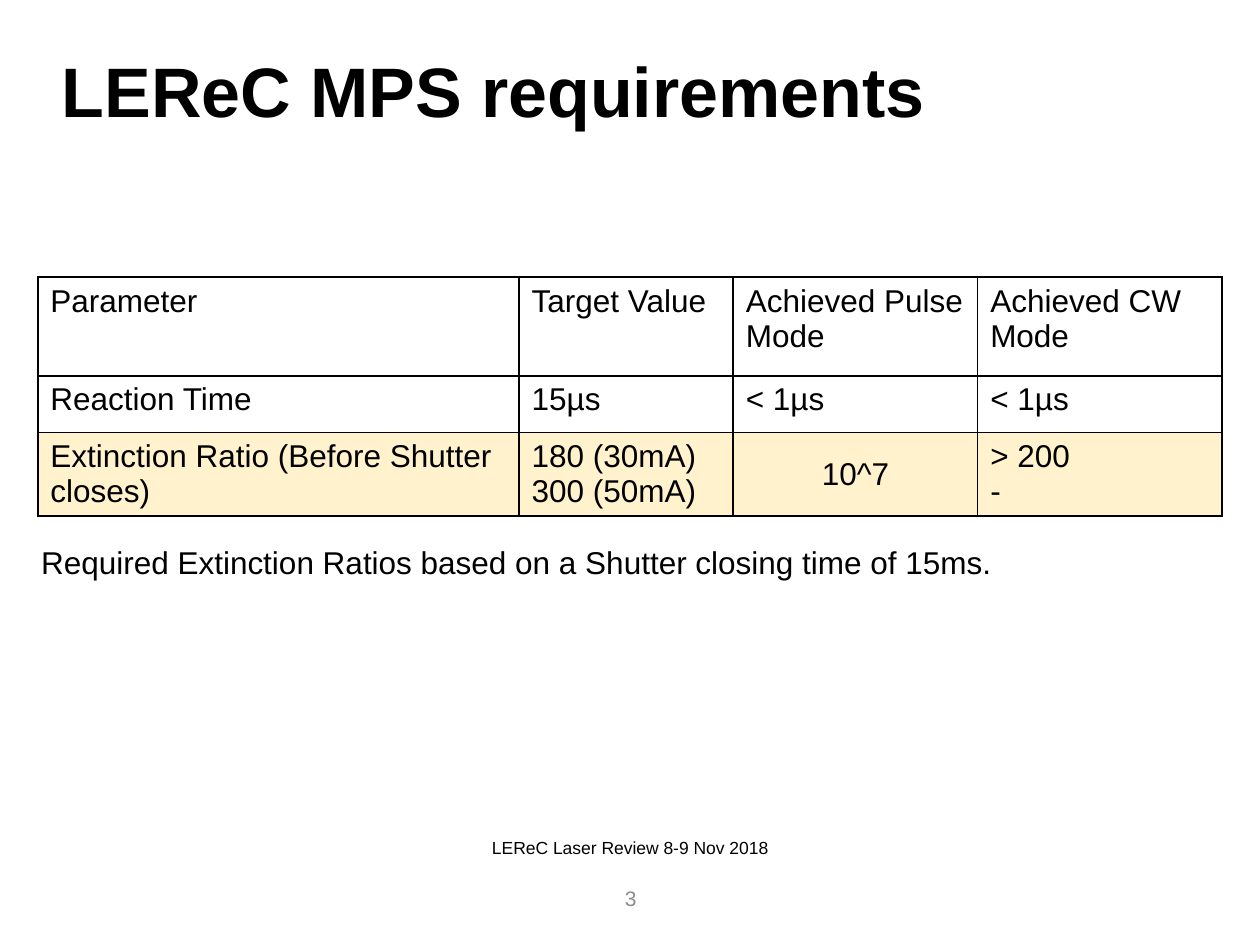
from dataclasses import dataclass

from lxml import etree
from pptx import Presentation
from pptx.dml.color import RGBColor
from pptx.enum.text import MSO_ANCHOR, MSO_AUTO_SIZE, PP_ALIGN
from pptx.oxml.ns import qn
from pptx.util import Pt

LEFT, CENTER = PP_ALIGN.LEFT, PP_ALIGN.CENTER
TOP, MIDDLE = MSO_ANCHOR.TOP, MSO_ANCHOR.MIDDLE
FIXED = MSO_AUTO_SIZE.NONE

FONT = "Arial"
COLORS = {"ink": "000000", "gray": "8C8C8C", "plain": "FFFFFF", "sand": "FFF2CC"}


@dataclass
class Box:
    x: float
    y: float
    w: float
    h: float


@dataclass
class Label:
    text: str
    box: Box
    size: float
    align: int = LEFT
    anchor: int = TOP
    color: str = "ink"
    wrap: bool = True


@dataclass
class Row:
    height: float
    fill: str
    texts: tuple


COLS = (275, 122.4, 139.7, 139.7)
ROWS = (
    Row(56.4, "plain", ("Parameter", "Target Value", "Achieved Pulse Mode",
                        "Achieved CW Mode")),
    Row(32.4, "plain", ("Reaction Time", "15µs", "< 1µs", "< 1µs")),
    Row(47.4, "sand", ("Extinction Ratio (Before Shutter closes)",
                       "180 (30mA)\n300 (50mA)", "10^7", "> 200\n-")),
)
MIDDLED = "10^7"

LABELS = (
    Label("LEReC Laser Review 8-9 Nov 2018", Box(250.6, 474.5, 218.9, 19.4), 10, CENTER),
    Label("3", Box(279.4, 499, 162, 28.8), 12, CENTER, MIDDLE, "gray"),
    Label("Required Extinction Ratios based on a Shutter closing time of 15ms.",
          Box(16.4, 306.7, 581, 29), 18, wrap=False),
)


def write(frame, text: str, *, size: float, color: str = "ink", bold: bool = False,
          align: int = LEFT, space: float = 1.0) -> None:
    """Fill a text frame, one paragraph for each line of text."""
    for i, line in enumerate(text.split("\n")):
        para = frame.add_paragraph() if i else frame.paragraphs[0]
        para.alignment, para.line_spacing = align, space
        run = para.add_run()
        run.text = line
        font = run.font
        font.name, font.size, font.bold = FONT, Pt(size), bold
        font.color.rgb = RGBColor.from_string(COLORS[color])


def frame_cell(cell, width: float = 1) -> None:
    """Draw all four borders of a table cell."""
    props = cell._tc.get_or_add_tcPr()
    for i, side in enumerate(("lnL", "lnR", "lnT", "lnB")):
        line = etree.Element(qn(f"a:{side}"), w=str(Pt(width)))
        fill = etree.SubElement(line, qn("a:solidFill"))
        etree.SubElement(fill, qn("a:srgbClr"), val=COLORS["ink"])
        props.insert(i, line)


def add_title(slide, text: str, box: Box) -> None:
    title = slide.shapes.title
    title.left, title.top = Pt(box.x), Pt(box.y)
    title.width, title.height = Pt(box.w), Pt(box.h)
    frame = title.text_frame
    frame.auto_size, frame.vertical_anchor = FIXED, TOP
    write(frame, text, size=40, bold=True, space=0.9)


def add_label(slide, label: Label) -> None:
    box = label.box
    shape = slide.shapes.add_textbox(Pt(box.x), Pt(box.y), Pt(box.w), Pt(box.h))
    frame = shape.text_frame
    frame.word_wrap, frame.vertical_anchor = label.wrap, label.anchor
    write(frame, label.text, size=label.size, color=label.color, align=label.align)


def add_grid(slide, x: float, y: float) -> None:
    high = sum(row.height for row in ROWS)
    table = slide.shapes.add_table(len(ROWS), len(COLS), Pt(x), Pt(y),
                                   Pt(sum(COLS)), Pt(high)).table
    table.first_row = table.horz_banding = False
    for col, width in zip(table.columns, COLS):
        col.width = Pt(width)
    for r, row in enumerate(ROWS):
        table.rows[r].height = Pt(row.height)
        for c, text in enumerate(row.texts):
            cell = table.cell(r, c)
            mid = text == MIDDLED
            cell.vertical_anchor = MIDDLE if mid else TOP
            cell.fill.solid()
            cell.fill.fore_color.rgb = RGBColor.from_string(COLORS[row.fill])
            frame_cell(cell)
            write(cell.text_frame, text, size=18, align=CENTER if mid else LEFT)


def main() -> None:
    deck = Presentation()
    deck.slide_width, deck.slide_height = Pt(720), Pt(540)
    slide = deck.slides.add_slide(deck.slide_layouts[5])  # title only

    # Title and table
    add_title(slide, "LEReC MPS requirements", Box(28.1, 28.8, 655.9, 104.4))
    add_grid(slide, 21.6, 158.4)

    # Note, footer and page number
    for label in LABELS:
        add_label(slide, label)

    deck.save("out.pptx")


if __name__ == "__main__":
    main()
